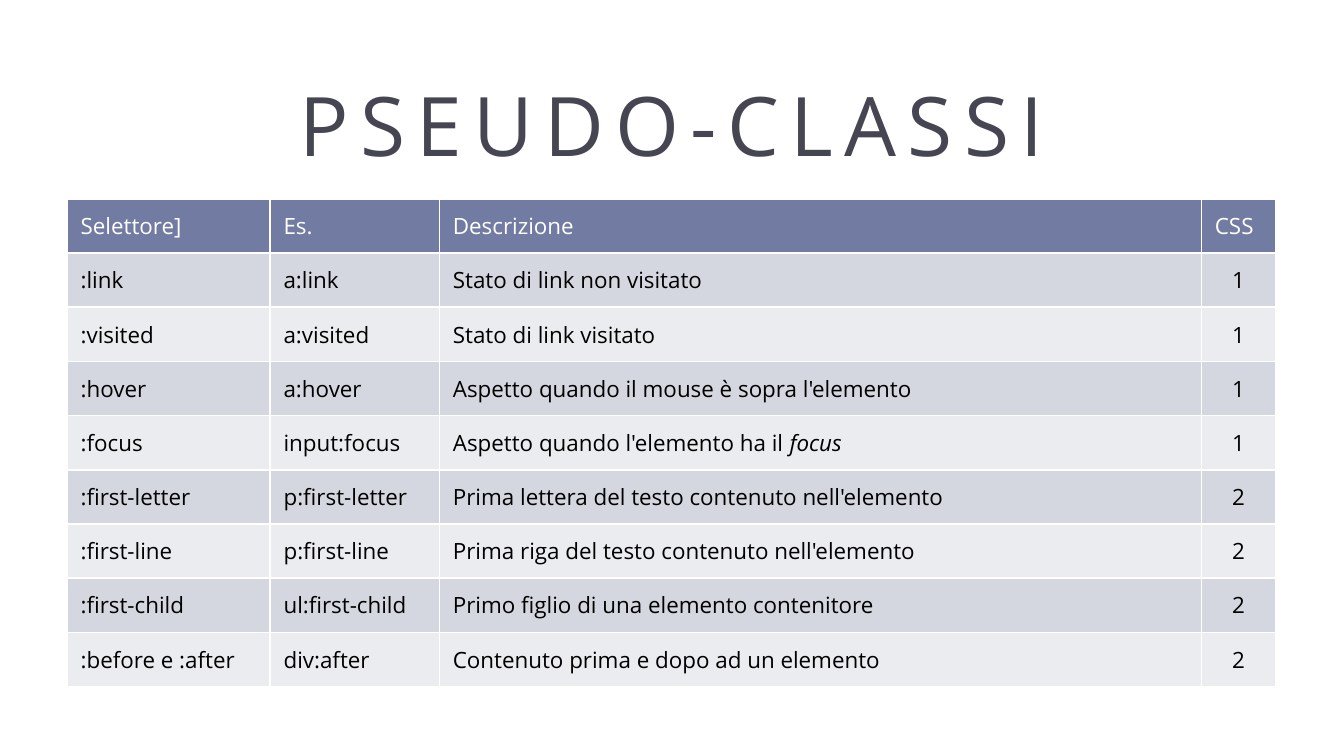
from pptx import Presentation
from pptx.dml.color import RGBColor
from pptx.enum.text import MSO_ANCHOR, PP_ALIGN
from pptx.oxml.ns import qn
from pptx.util import Inches, Pt
from lxml import etree

MIDDLE = MSO_ANCHOR.MIDDLE
LEFT, CENTER = PP_ALIGN.LEFT, PP_ALIGN.CENTER

DARK = RGBColor(0x46, 0x46, 0x53)
BLUE = RGBColor(0x72, 0x7C, 0xA3)
BAND = RGBColor(0xD5, 0xD7, 0xE0)
PALE = RGBColor(0xEB, 0xEC, 0xF0)
WHITE = RGBColor(0xFF, 0xFF, 0xFF)
BLACK = RGBColor(0, 0, 0)

WIDTHS = [1.51, 1.26, 5.67, 0.55]
ROWS = [
    ("Selettore]", "Es.", "Descrizione", "CSS"),
    (":link", "a:link", "Stato di link non visitato", "1"),
    (":visited", "a:visited", "Stato di link visitato", "1"),
    (":hover", "a:hover", "Aspetto quando il mouse è sopra l'elemento", "1"),
    (":focus", "input:focus", "Aspetto quando l'elemento ha il *focus*", "1"),
    (":first-letter", "p:first-letter",
     "Prima lettera del testo contenuto nell'elemento", "2"),
    (":first-line", "p:first-line",
     "Prima riga del testo contenuto nell'elemento", "2"),
    (":first-child", "ul:first-child",
     "Primo figlio di una elemento contenitore", "2"),
    (":before e :after", "div:after",
     "Contenuto prima e dopo ad un elemento", "2"),
]


class Deck:
    def __init__(self, font):
        self.font = font
        self.prs = Presentation()
        self.prs.slide_width = Inches(10)
        self.prs.slide_height = Inches(10 * 9 / 16)
        self.slide = self.prs.slides.add_slide(self.prs.slide_layouts[5])

    def style(self, run, size, color):
        run.font.name = self.font
        run.font.size = Pt(size)
        run.font.color.rgb = color

    def title(self, text, left, top, width, height):
        box = self.slide.shapes.title
        box.left, box.top = Inches(left), Inches(top)
        box.width, box.height = Inches(width), Inches(height)
        frame = box.text_frame
        frame.text = text
        frame.vertical_anchor = MIDDLE
        para = frame.paragraphs[0]
        para.alignment = CENTER
        run = para.runs[0]
        self.style(run, 44, DARK)
        run.font._element.set("spc", "600")

    def border(self, cell, side):
        props = cell._tc.get_or_add_tcPr()
        line = etree.SubElement(props, qn("a:ln" + side), w=str(Pt(1)))
        fill = etree.SubElement(line, qn("a:solidFill"))
        etree.SubElement(fill, qn("a:srgbClr"), val=str(WHITE))

    def cell(self, cell, text, fill, color, align):
        """Fill one cell; text between *stars* is italic."""
        for side in "LRTB":
            self.border(cell, side)
        cell.fill.solid()
        cell.fill.fore_color.rgb = fill
        cell.vertical_anchor = MIDDLE
        para = cell.text_frame.paragraphs[0]
        para.alignment = align
        for i, part in enumerate(text.split("*")):
            if part:
                run = para.add_run()
                run.text = part
                self.style(run, 12, color)
                if i % 2:
                    run.font.italic = True

    def table(self, rows, widths, left, top, height):
        grid = self.slide.shapes.add_table(
            len(rows), len(widths), Inches(left), Inches(top),
            Inches(sum(widths)), Inches(height)).table
        for col, width in zip(grid.columns, widths):
            col.width = Inches(width)
        last = len(widths) - 1
        for r, row in enumerate(rows):
            head = r == 0
            fill = BLUE if head else BAND if r % 2 else PALE
            color = WHITE if head else BLACK
            for c, text in enumerate(row):
                align = CENTER if c == last and not head else LEFT
                self.cell(grid.cell(r, c), text, fill, color, align)


def main():
    deck = Deck("Open Sans")
    deck.title("PSEUDO-CLASSI", 0.5, 0.45, 9, 0.94)
    deck.table(ROWS, WIDTHS, 0.5, 1.48, 3.63)
    deck.prs.save("out.pptx")


if __name__ == "__main__":
    main()
